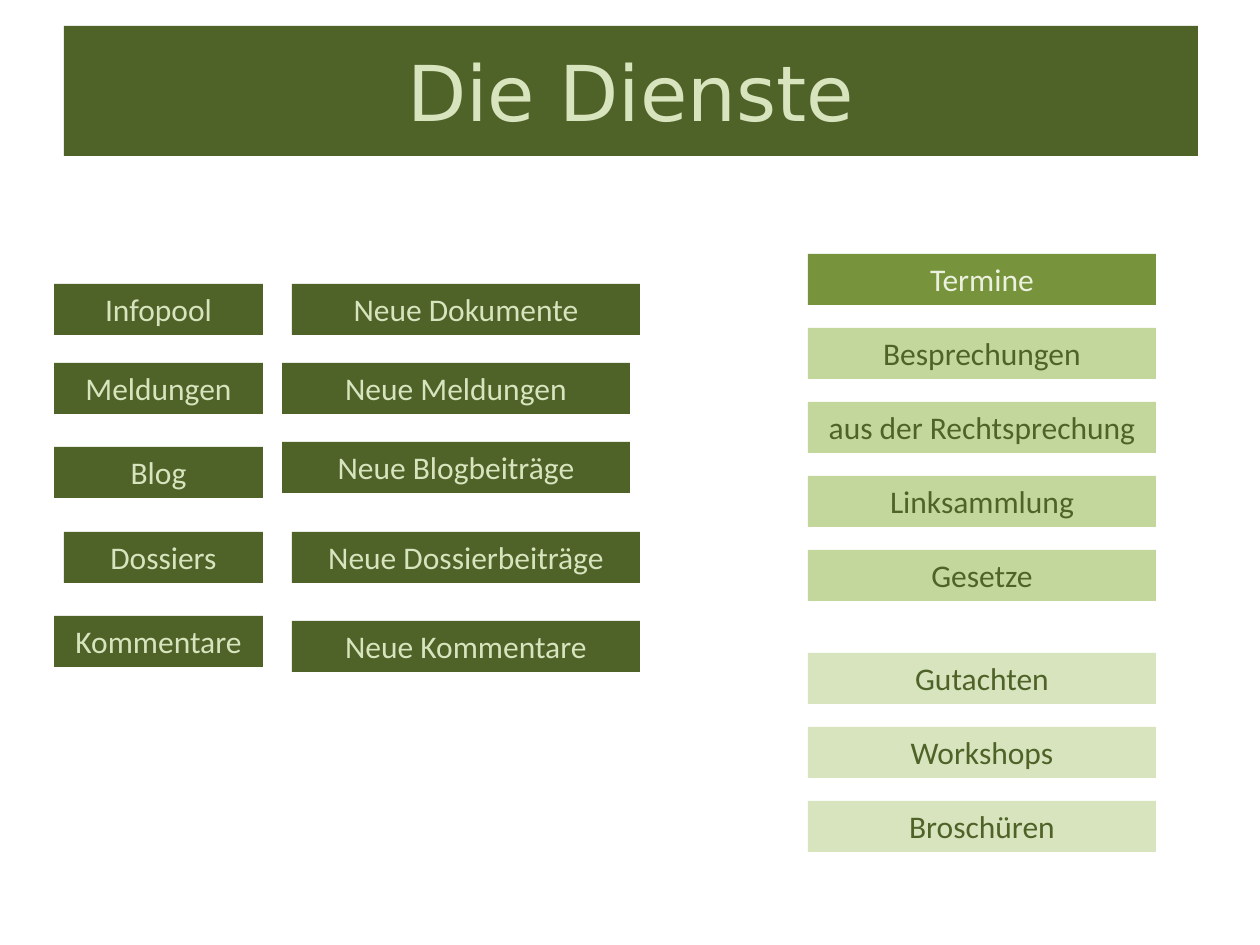
"""Build the slide that lists the services and their news feeds."""
import dataclasses
import typing

import pptx
import pptx.dml.color
import pptx.enum.text
import pptx.util

RGB = pptx.dml.color.RGBColor
DARK = RGB(0x4F, 0x62, 0x28)
GREEN = RGB(0x77, 0x93, 0x3C)
LIGHT = RGB(0xC3, 0xD6, 0x9B)
PALE = RGB(0xD7, 0xE4, 0xBD)
CREAM = RGB(0xEB, 0xF1, 0xDE)

SCALE = 914400 / 126
HIGH = 51
WIDE = 348
EDGE = 263
STEP = 74


@dataclasses.dataclass(frozen=True)
class Label:
    text: str
    left: int
    top: int
    width: int
    fill: RGB = DARK
    color: RGB = PALE


@dataclasses.dataclass(frozen=True)
class Pair:
    name: str
    left: int
    top: int
    news: str
    news_left: int
    news_top: int


@dataclasses.dataclass(frozen=True)
class Stack:
    top: int
    fill: RGB
    color: RGB
    names: tuple[str, ...]


PAIRS = (
    Pair("Infopool", 54, 284, "Neue Dokumente", 292, 284),
    Pair("Meldungen", 54, 363, "Neue Meldungen", 282, 363),
    Pair("Blog", 54, 447, "Neue Blogbeiträge", 282, 442),
    Pair("Dossiers", 64, 532, "Neue Dossierbeiträge", 292, 532),
    Pair("Kommentare", 54, 616, "Neue Kommentare", 292, 621),
)
STACKS = (
    Stack(254, GREEN, CREAM, ("Termine",)),
    Stack(254 + STEP, LIGHT, DARK,
          ("Besprechungen", "aus der Rechtsprechung", "Linksammlung", "Gesetze")),
    Stack(653, PALE, DARK, ("Gutachten", "Workshops", "Broschüren")),
)


def px(count: int) -> pptx.util.Emu:
    """Turn pixels into EMU."""
    return pptx.util.Emu(round(count * SCALE))


def style(shape: typing.Any, label: Label, font: str, size: int) -> None:
    """Fill a shape and write its centred text."""
    shape.fill.solid()
    shape.fill.fore_color.rgb = label.fill
    frame = shape.text_frame
    frame.text = label.text
    frame.word_wrap = True
    para = frame.paragraphs[0]
    para.alignment = pptx.enum.text.PP_ALIGN.CENTER
    para.font.name = font
    para.font.size = pptx.util.Pt(size)
    para.font.color.rgb = label.color


def draw(shapes: typing.Any, label: Label) -> None:
    """Add one label as a text box."""
    box = shapes.add_textbox(px(label.left), px(label.top), px(label.width), px(HIGH))
    style(box, label, "Calibri", 18)
    box.text_frame.auto_size = pptx.enum.text.MSO_AUTO_SIZE.SHAPE_TO_FIT_TEXT


def head(title: typing.Any) -> None:
    """Place and format the title bar."""
    title.left, title.top = px(64), px(26)
    title.width, title.height = px(1134), px(130)
    style(title, Label("Die Dienste", 64, 26, 1134), "DejaVu Sans", 44)
    title.text_frame.auto_size = pptx.enum.text.MSO_AUTO_SIZE.NONE
    title.text_frame.vertical_anchor = pptx.enum.text.MSO_ANCHOR.MIDDLE


def main() -> None:
    """Build and save the deck."""
    deck = pptx.Presentation()
    deck.slide_width, deck.slide_height = px(1260), px(945)
    slide = deck.slides.add_slide(deck.slide_layouts.get_by_name("Title Only"))
    head(slide.shapes.title)
    for pair in PAIRS:
        group = slide.shapes.add_group_shape()
        draw(group.shapes, Label(pair.name, pair.left, pair.top, EDGE - pair.left))
        draw(group.shapes, Label(pair.news, pair.news_left, pair.news_top, WIDE))
    for stack in STACKS:
        for row, name in enumerate(stack.names):
            top = stack.top + row * STEP
            draw(slide.shapes, Label(name, 808, top, WIDE, stack.fill, stack.color))
    deck.save("out.pptx")


if __name__ == "__main__":
    main()
